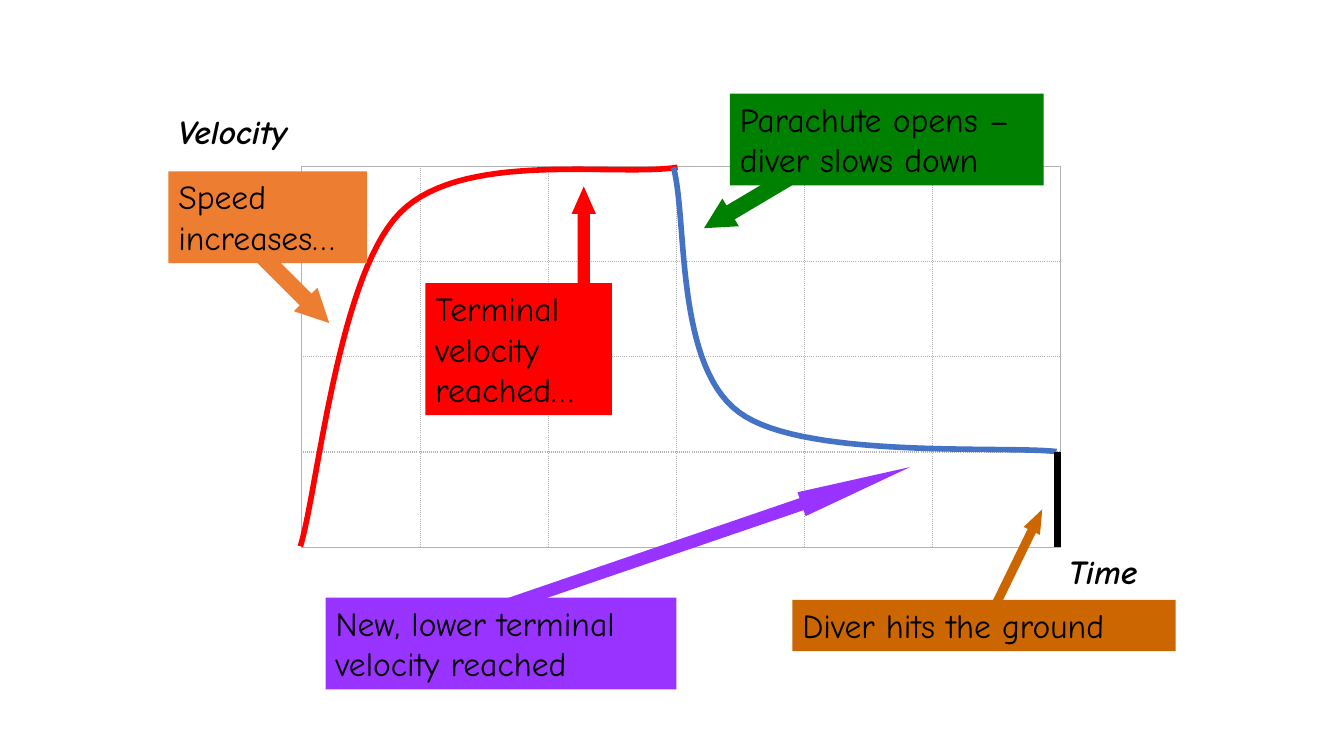
"""Build a slide with the velocity-time graph of a skydiver."""
from lxml import etree
from pptx import Presentation
from pptx import util as u
from pptx.dml.color import RGBColor
from pptx.enum import shapes, text
from pptx.oxml import ns

BLACK = RGBColor(0x00, 0x00, 0x00)
RED = RGBColor(0xFF, 0x00, 0x00)
BLUE = RGBColor(0x44, 0x72, 0xC4)
ORANGE = RGBColor(0xED, 0x7D, 0x31)
GREEN = RGBColor(0x00, 0x80, 0x00)
PURPLE = RGBColor(0x99, 0x33, 0xFF)
BROWN = RGBColor(0xCC, 0x66, 0x00)
GRID_GREY = RGBColor(0xB2, 0xB2, 0xB2)
FONT = "Comic Neue"
ROWS, COLUMNS = 4, 6
GRID_HEIGHT = 3.78
CURVE_STEPS = 30


def write(box, words, emphasis=False):
    frame = box.text_frame
    frame.word_wrap = True
    frame.vertical_anchor = text.MSO_ANCHOR.TOP
    para = frame.paragraphs[0]
    para.alignment = text.PP_ALIGN.LEFT
    span = para.add_run()
    span.text = words
    span.font.name = FONT
    span.font.size = u.Pt(24)
    span.font.bold = span.font.italic = emphasis
    span.font.color.rgb = BLACK


def bezier_point(ends, t):
    weights = ((1 - t) ** 3, 3 * t * (1 - t) ** 2, 3 * t ** 2 * (1 - t), t ** 3)
    return tuple(u.Inches(sum(w * point[axis] for w, point in zip(weights, ends)))
                 for axis in (0, 1))


deck = Presentation()
deck.slide_width, deck.slide_height = u.Inches(13.33), u.Inches(7.5)
page = deck.slides.add_slide(deck.slide_layouts[6])

grid = page.shapes.add_table(ROWS, COLUMNS, u.Inches(2.99), u.Inches(1.65),
                             u.Inches(7.53), u.Inches(GRID_HEIGHT)).table
grid.first_row = grid.horz_banding = False
for index, column in enumerate(grid.columns):
    column.width = u.Inches(1.27 if index else 1.18)
for row_index, row in enumerate(grid.rows):
    row.height = u.Inches(GRID_HEIGHT / ROWS)
    for column_index, cell in enumerate(row.cells):
        outer_edges = {"lnL": column_index == 0, "lnR": column_index == COLUMNS - 1,
                       "lnT": row_index == 0, "lnB": row_index == ROWS - 1}
        properties = cell._tc.get_or_add_tcPr()
        for edge, is_outer in outer_edges.items():
            border = etree.SubElement(properties, ns.qn(f"a:{edge}"), w=str(u.Pt(1)))
            fill = etree.SubElement(border, ns.qn("a:solidFill"))
            etree.SubElement(fill, ns.qn("a:srgbClr"), val=str(GRID_GREY))
            etree.SubElement(border, ns.qn("a:prstDash"), val="solid" if is_outer else "sysDot")
        cell.fill.background()

for words, left, top, width in (("Velocity", 1.67, 1.05, 1.67), ("Time", 10.5, 5.42, 1.17)):
    axis_label = page.shapes.add_textbox(u.Inches(left), u.Inches(top),
                                         u.Inches(width), u.Inches(0.5))
    write(axis_label, words, emphasis=True)

curves = (
    (RED, [(2.98, 5.42), (3.15, 4.87), (3.35, 2.73), (3.97, 2.11),
           (4.59, 1.48), (6.14, 1.76), (6.72, 1.66)]),
    (BLUE, [(10.48, 4.48), (9.96, 4.42), (7.96, 4.56), (7.33, 4.09),
            (6.69, 3.62), (6.82, 2.17), (6.68, 1.66)]),
)
for color, controls in curves:
    points = [bezier_point(controls[start:start + 4], step / CURVE_STEPS)
              for start in (0, 3) for step in range(1, CURVE_STEPS + 1)]
    builder = page.shapes.build_freeform(*map(u.Inches, controls[0]))
    builder.add_line_segments(points, close=False)
    curve = builder.convert_to_shape()
    curve.shadow.inherit = False
    curve.fill.background()
    curve.line.color.rgb = color
    curve.line.width = u.Pt(4)

landing = page.shapes.add_connector(shapes.MSO_CONNECTOR.STRAIGHT, u.Inches(10.49), u.Inches(4.48),
                                    u.Inches(10.49), u.Inches(5.43))
landing.line.color.rgb = BLACK
landing.line.width = u.Pt(4.5)
etree.SubElement(landing._element.spPr, ns.qn("a:effectLst"))

RECTANGLE = shapes.MSO_SHAPE.RECTANGLE
RIGHT, UP = shapes.MSO_SHAPE.RIGHT_ARROW, shapes.MSO_SHAPE.UP_ARROW
callouts = (
    ("Speed increases…", ORANGE, (1.67, 1.7, 1.97, 0.91),
     RIGHT, (2.13, 2.57, 1.33, 0.33), 45, 1),
    ("Terminal velocity reached…", RED, (4.22, 2.81, 1.85, 1.31),
     UP, (5.67, 1.85, 0.24, 1.09), 0, 1.13),
    ("Parachute opens – diver slows down", GREEN, (7.24, 0.93, 3.11, 0.91),
     UP, (7.36, 1.32, 0.32, 1.25), 239.3, 0.96),
    ("New, lower terminal velocity reached", PURPLE, (3.23, 5.93, 3.48, 0.91),
     RIGHT, (4.57, 5.25, 4.58, 0.25), 341.1, 4.55),
    ("Diver hits the ground", BROWN, (7.86, 5.95, 3.8, 0.51),
     UP, (10.02, 5, 0.18, 1.04), 26, 1.33),
)
for words, color, label_place, arrow_kind, arrow_place, angle, head_length in callouts:
    callout = page.shapes.add_group_shape()
    arrow = callout.shapes.add_shape(arrow_kind, *map(u.Inches, arrow_place))
    arrow.rotation = angle
    arrow.adjustments[0] = 0.5
    arrow.adjustments[1] = head_length
    label = callout.shapes.add_shape(RECTANGLE, *map(u.Inches, label_place))
    write(label, words)
    for part in (arrow, label):
        part.shadow.inherit = False
        part.fill.solid()
        part.fill.fore_color.rgb = color
        part.line.fill.background()

deck.save("out.pptx")
